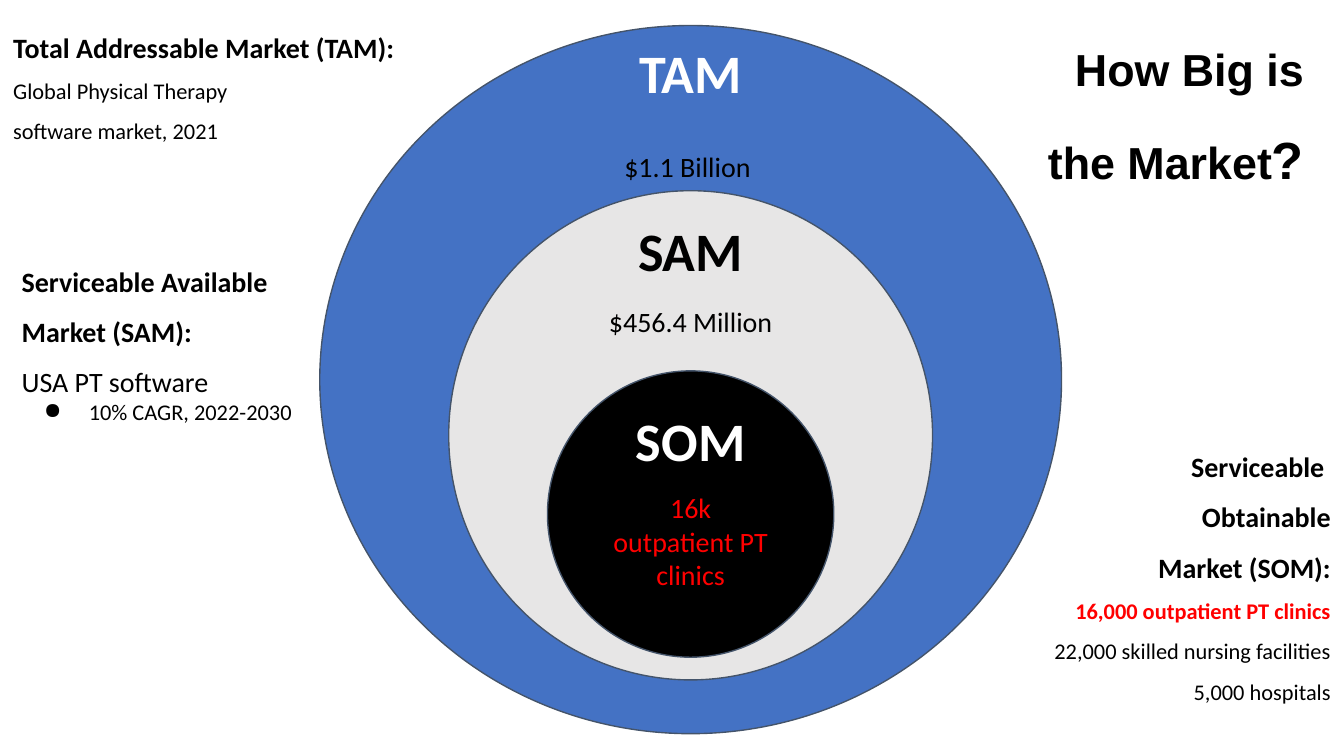
from lxml.etree import SubElement
from pptx import Presentation
from pptx.dml.color import RGBColor
from pptx.enum.shapes import MSO_SHAPE
from pptx.enum.text import PP_ALIGN
from pptx.oxml.ns import qn
from pptx.util import Pt

LEFT, MID, RIGHT = PP_ALIGN.LEFT, PP_ALIGN.CENTER, PP_ALIGN.RIGHT
BLACK, WHITE, RED = "000000", "FFFFFF", "FF0000"
BLUE, GRAY, EDGE = "4472C4", "E7E6E6", "44546A"
BIG, BODY, SMALL = 29, 15, 12
AXIS = 370  # shared centre line of the circles


def color(code):
    return RGBColor.from_string(code)


class Deck:
    face = "Calibri"
    inset = 7.2

    def __init__(self, wide, high):
        self.prs = Presentation()
        self.prs.slide_width, self.prs.slide_height = Pt(wide), Pt(high)
        self.slide = self.prs.slides.add_slide(self.prs.slide_layouts[6])

    def ring(self, top, wide, high, fill):
        ring = self.slide.shapes.add_shape(
            MSO_SHAPE.OVAL, Pt(AXIS - wide / 2), Pt(top), Pt(wide), Pt(high))
        ring.shadow.inherit = False
        ring.fill.solid()
        ring.fill.fore_color.rgb = color(fill)
        ring.line.color.rgb = color(EDGE)
        ring.line.width = Pt(0.75)

    def box(self, left, top, wide, high):
        frame = self.slide.shapes.add_textbox(
            Pt(left), Pt(top), Pt(wide), Pt(high)).text_frame
        frame.word_wrap = True
        frame.margin_left = frame.margin_right = Pt(self.inset)
        frame.margin_top = frame.margin_bottom = Pt(self.inset)
        return frame

    def line(self, frame, text, size=BODY, bold=False, ink=BLACK,
             align=LEFT, space=1.5, dot=False, face=face):
        para = frame.paragraphs[0]
        if para.runs:
            para = frame.add_paragraph()
        para.alignment = align
        para.line_spacing = space
        if dot:
            self.dot(para)
        para.add_run().text = text
        para.font.size, para.font.bold = Pt(size), bold
        para.font.name = face
        para.font.color.rgb = color(ink)
        return para

    def dot(self, para):
        props = para._p.get_or_add_pPr()
        props.set("marL", str(Pt(36)))
        props.set("indent", str(-Pt(24)))
        SubElement(props, qn("a:buChar")).set("char", "●")

    def label(self, text, top, wide, high, **style):
        frame = self.box(AXIS - wide / 2, top, wide, high)
        self.line(frame, text, align=MID, **style)

    def note(self, place, rows, align=LEFT):
        frame = self.box(*place)
        for text, style in rows:
            self.line(frame, text, align=align, **style)


deck = Deck(720, 405)
head = {"bold": True}
small = {"size": SMALL}

# Nested circles with their names
for name, ink, fill, top, wide, high, drop in (
        ("TAM", WHITE, BLUE, 13.7, 397.4, 379.4, 13.7),
        ("SAM", BLACK, GRAY, 102.2, 259.2, 262.1, 109.4),
        ("SOM", WHITE, BLACK, 198.7, 153.4, 153.4, 211)):
    deck.ring(top, wide, high, fill)
    deck.label(name, drop, 145.4, 44.6, size=BIG, bold=True, ink=ink, space=1)

# Values inside the circles
deck.label("$1.1 Billion ", 64.1, 145.4, 31.7)
deck.label("$456.4 Million", 156.2, 181.4, 31.7, space=1)
deck.label("16k outpatient PT clinics", 255.6, 103.6, 72.7, ink=RED, space=1)

# Notes at the sides
deck.note((0, 0, 240.5, 88.6), [
    ("Total Addressable Market (TAM):", head),
    ("Global Physical Therapy", small),
    ("software market, 2021", small)])
deck.note((4.5, 125.3, 163.4, 123.8), [
    ("Serviceable Available", head),
    ("Market (SAM):", head),
    ("USA PT software", {}),
    ("10% CAGR, 2022-2030", {"size": SMALL, "space": 1, "dot": True})])
deck.note((538.6, 224.6, 181.4, 180), [
    ("Serviceable ", head),
    ("Obtainable", head),
    ("Market (SOM):", head),
    ("16,000 outpatient PT clinics", {"size": SMALL, "bold": True, "ink": RED}),
    ("22,000 skilled nursing facilities", small),
    ("5,000 hospitals", small)], RIGHT)

# Title with a larger question mark
title = deck.line(deck.box(552.2, 0.7, 153.4, 116.6), "How Big is the Market",
                  size=24, bold=True, align=RIGHT, face="Arial")
mark = title.add_run()
mark.text = "?"
mark.font.size = Pt(28)

deck.prs.save("out.pptx")
